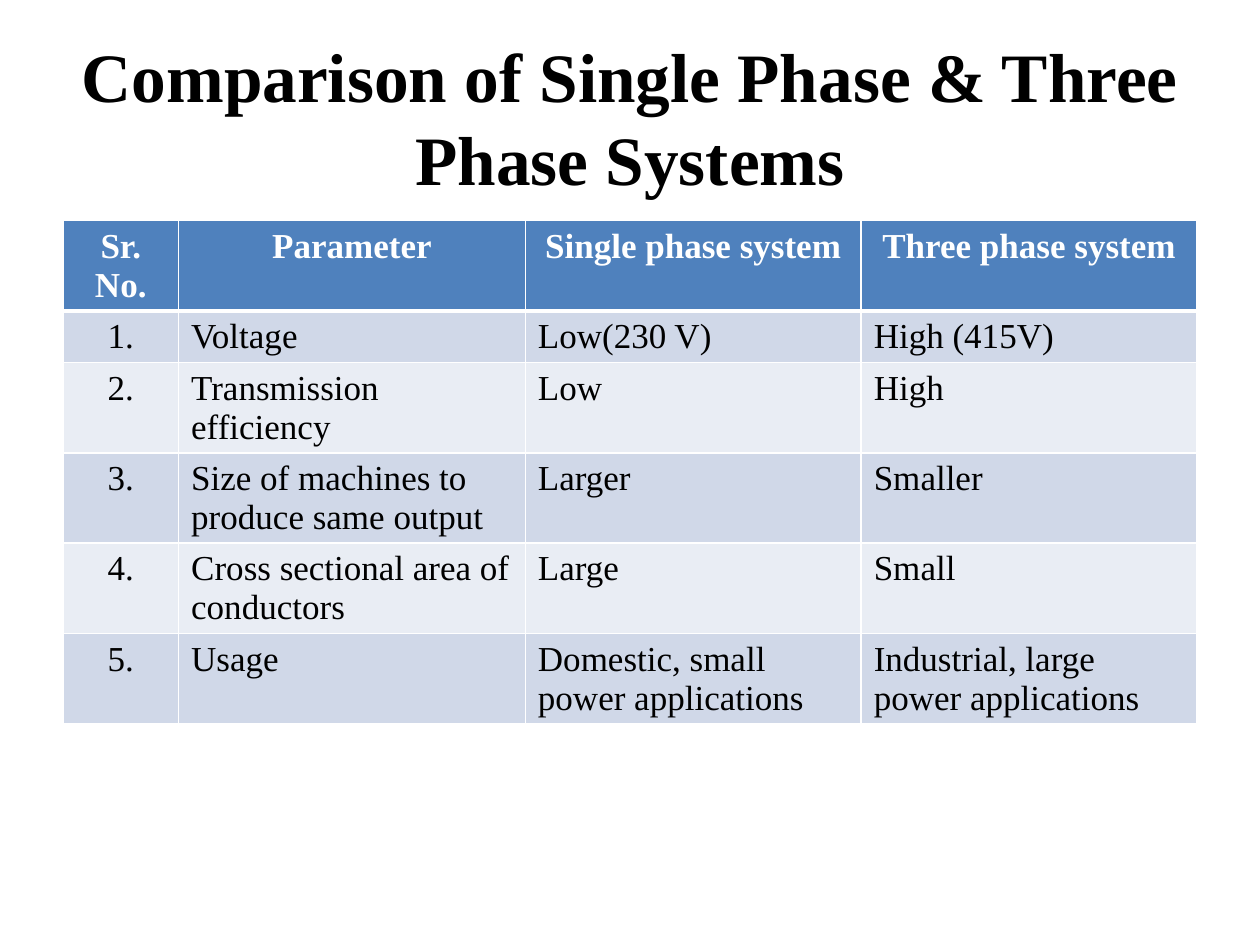
from dataclasses import dataclass

from lxml.etree import SubElement
from pptx import Presentation
from pptx.dml.color import RGBColor
from pptx.enum.text import MSO_ANCHOR as Anchor, PP_ALIGN as Align
from pptx.oxml.ns import qn
from pptx.util import Cm, Pt


@dataclass(frozen=True)
class Theme:
    font: str = "Times New Roman"
    title_size: float = 39.6
    table_size: int = 20
    text: str = "000000"
    light: str = "FFFFFF"
    header: str = "4F81BD"
    bands: tuple = ("D0D8E8", "E9EDF4")


theme = Theme()


def format_paragraph(paragraph, size, color, bold, alignment):
    paragraph.alignment = alignment
    paragraph.font.name = theme.font
    paragraph.font.size = Pt(size)
    paragraph.font.bold = bold
    paragraph.font.color.rgb = RGBColor.from_string(color)


def add_border(cell, side, width):
    line = SubElement(cell._tc.get_or_add_tcPr(), qn(f"a:ln{side}"), w=str(Pt(width)))
    fill = SubElement(line, qn("a:solidFill"))
    SubElement(fill, qn("a:srgbClr"), val=theme.light)


presentation = Presentation()
presentation.slide_width = Cm(25.4)
presentation.slide_height = Cm(19.05)
slide = presentation.slides.add_slide(presentation.slide_layouts[5])

title = slide.shapes.title
title.left, title.top, title.width, title.height = Cm(1.27), Cm(0.76), Cm(22.86), Cm(3.18)
title.text_frame.text = "Comparison of Single Phase & Three Phase Systems"
title.text_frame.word_wrap = True
title.text_frame.vertical_anchor = Anchor.MIDDLE
format_paragraph(title.text_frame.paragraphs[0], theme.title_size, theme.text, True, Align.CENTER)

comparison = [
    ("Sr. No.", "Parameter", "Single phase system", "Three phase system"),
    ("1.", "Voltage", "Low(230 V)", "High (415V)"),
    ("2.", "Transmission efficiency", "Low", "High"),
    ("3.", "Size of machines to produce same output", "Larger", "Smaller"),
    ("4.", "Cross sectional area of conductors", "Large", "Small"),
    ("5.", "Usage", "Domestic, small power applications", "Industrial, large power applications"),
]
column_widths = [2.33, 6.99, 6.77, 6.77]
row_height = 1.03

table = slide.shapes.add_table(
    len(comparison), len(column_widths),
    Cm(1.27), Cm(4.45), Cm(sum(column_widths)), Cm(row_height * len(comparison)),
).table
for column, width in zip(table.columns, column_widths):
    column.width = Cm(width)

for row_index, texts in enumerate(comparison):
    is_header = row_index == 0
    table.rows[row_index].height = Cm(row_height)
    fill_color = theme.header if is_header else theme.bands[(row_index - 1) % 2]
    text_color = theme.light if is_header else theme.text
    border_widths = {"L": 1, "R": 1, "T": 3 if row_index == 1 else 1, "B": 3 if is_header else 1}
    for column_index, text in enumerate(texts):
        cell = table.cell(row_index, column_index)
        cell.text = text
        alignment = Align.CENTER if is_header or column_index == 0 else Align.LEFT
        format_paragraph(cell.text_frame.paragraphs[0], theme.table_size, text_color, is_header, alignment)
        for side, width in border_widths.items():
            add_border(cell, side, width)
        cell.fill.solid()
        cell.fill.fore_color.rgb = RGBColor.from_string(fill_color)

presentation.save("out.pptx")
